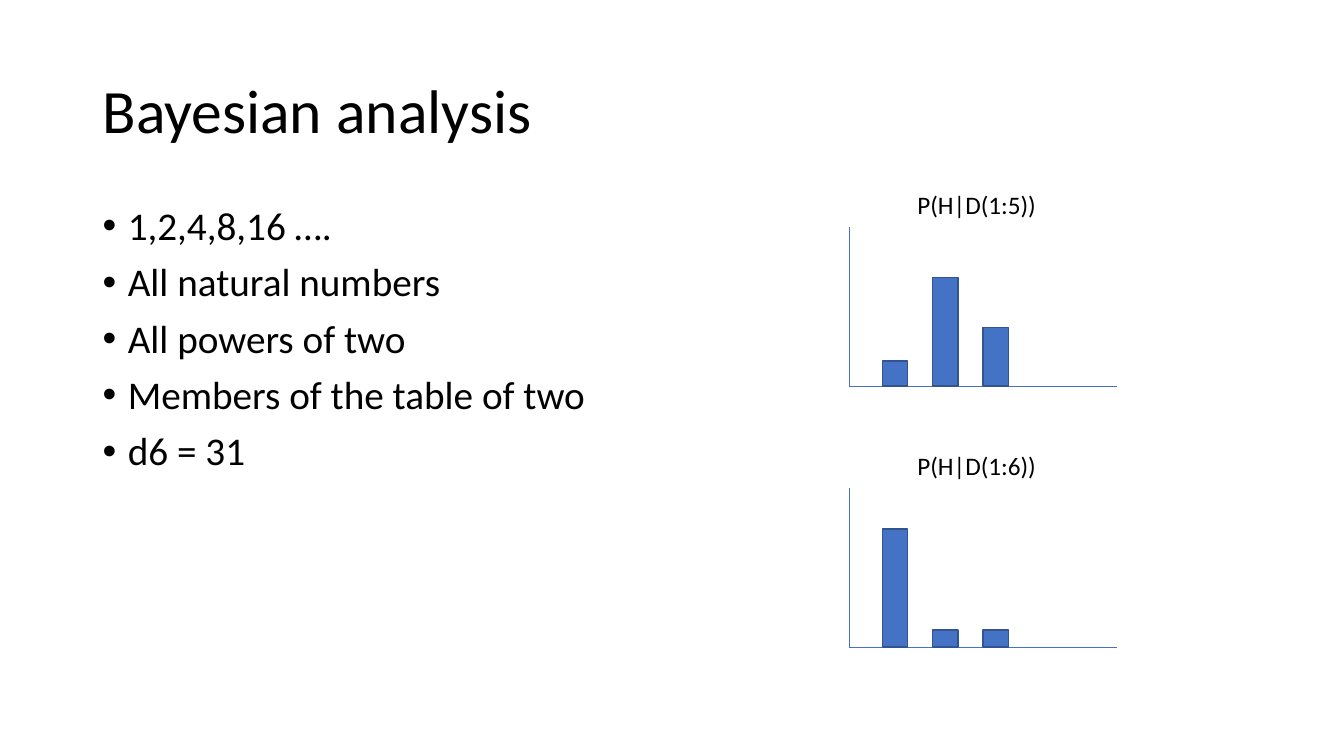
from lxml import etree
from pptx import Presentation
from pptx.dml.color import RGBColor
from pptx.enum.shapes import MSO_CONNECTOR, MSO_SHAPE
from pptx.enum.text import MSO_ANCHOR, MSO_AUTO_SIZE
from pptx.oxml.ns import qn
from pptx.util import Inches, Pt

LINE = MSO_CONNECTOR.STRAIGHT
RECT = MSO_SHAPE.RECTANGLE
TOP, MIDDLE = MSO_ANCHOR.TOP, MSO_ANCHOR.MIDDLE
GROW = MSO_AUTO_SIZE.SHAPE_TO_FIT_TEXT

FONT = "Calibri"
COLORS = {"text": "000000", "bar": "4472C4", "edge": "325491"}
POINTS = [
    "1,2,4,8,16 ….",
    "All natural numbers",
    "All powers of two",
    "Members of the table of two",
    "d6 = 31",
]
# Label, base line and bar heights of each plot
PLOTS = [
    ("P(H|D(1:5))", 3.83, [0.25, 1.08, 0.58]),
    ("P(H|D(1:6))", 6.42, [1.17, 0.17, 0.17]),
]


def color(name):
    return RGBColor.from_string(COLORS[name])


def add_bullet(para):
    props = para._p.get_or_add_pPr()
    props.set("marL", str(Inches(0.25)))
    props.set("indent", str(Inches(-0.25)))
    etree.SubElement(props, qn("a:buFont")).set("typeface", "Arial")
    etree.SubElement(props, qn("a:buChar")).set("char", "•")


def add_text(slide, lines, left, top, width, height, size=18, anchor=TOP,
             wrap=True, spacing=None, before=None, bullet=False):
    box = slide.shapes.add_textbox(
        Inches(left), Inches(top), Inches(width), Inches(height))
    frame = box.text_frame
    frame.word_wrap = wrap
    frame.vertical_anchor = anchor
    if not wrap:
        frame.auto_size = GROW
    for i, line in enumerate(lines):
        para = frame.add_paragraph() if i else frame.paragraphs[0]
        para.line_spacing = spacing
        para.space_before = before
        if bullet:
            add_bullet(para)
        run = para.add_run()
        run.text = line
        run.font.name = FONT
        run.font.size = Pt(size)
        run.font.color.rgb = color("text")


def add_axis(slide, x1, y1, x2, y2):
    axis = slide.shapes.add_connector(
        LINE, Inches(x1), Inches(y1), Inches(x2), Inches(y2))
    axis.line.color.rgb = color("bar")
    axis.line.width = Pt(0.5)
    etree.SubElement(axis._element.spPr, qn("a:effectLst"))


def add_bar(slide, left, base, height):
    bar = slide.shapes.add_shape(
        RECT, Inches(left), Inches(base - height), Inches(0.25), Inches(height))
    bar.shadow.inherit = False
    bar.fill.solid()
    bar.fill.fore_color.rgb = color("bar")
    bar.line.color.rgb = color("edge")
    bar.line.width = Pt(1)


def add_plot(slide, label, base, heights):
    left = 8.42
    add_axis(slide, left, base, 11.08, base)
    for i, height in enumerate(heights):
        add_bar(slide, 8.75 + 0.5 * i, base, height)
    add_axis(slide, left, base, left, base - 1.58)
    add_text(slide, [label], 9, base - 2, 1.39, 0.4, wrap=False)


def main():
    prs = Presentation()
    prs.slide_width, prs.slide_height = Inches(13.33), Inches(7.5)
    slide = prs.slides.add_slide(prs.slide_layouts[6])

    # Title and points
    add_text(slide, ["Bayesian analysis"], 0.92, 0.4, 11.5, 1.45,
             size=44, anchor=MIDDLE, spacing=0.9)
    add_text(slide, POINTS, 0.92, 2, 11.5, 4.76,
             size=28, spacing=0.9, before=Pt(10), bullet=True)

    # Posterior plots
    for label, base, heights in PLOTS:
        add_plot(slide, label, base, heights)

    prs.save("out.pptx")


if __name__ == "__main__":
    main()
